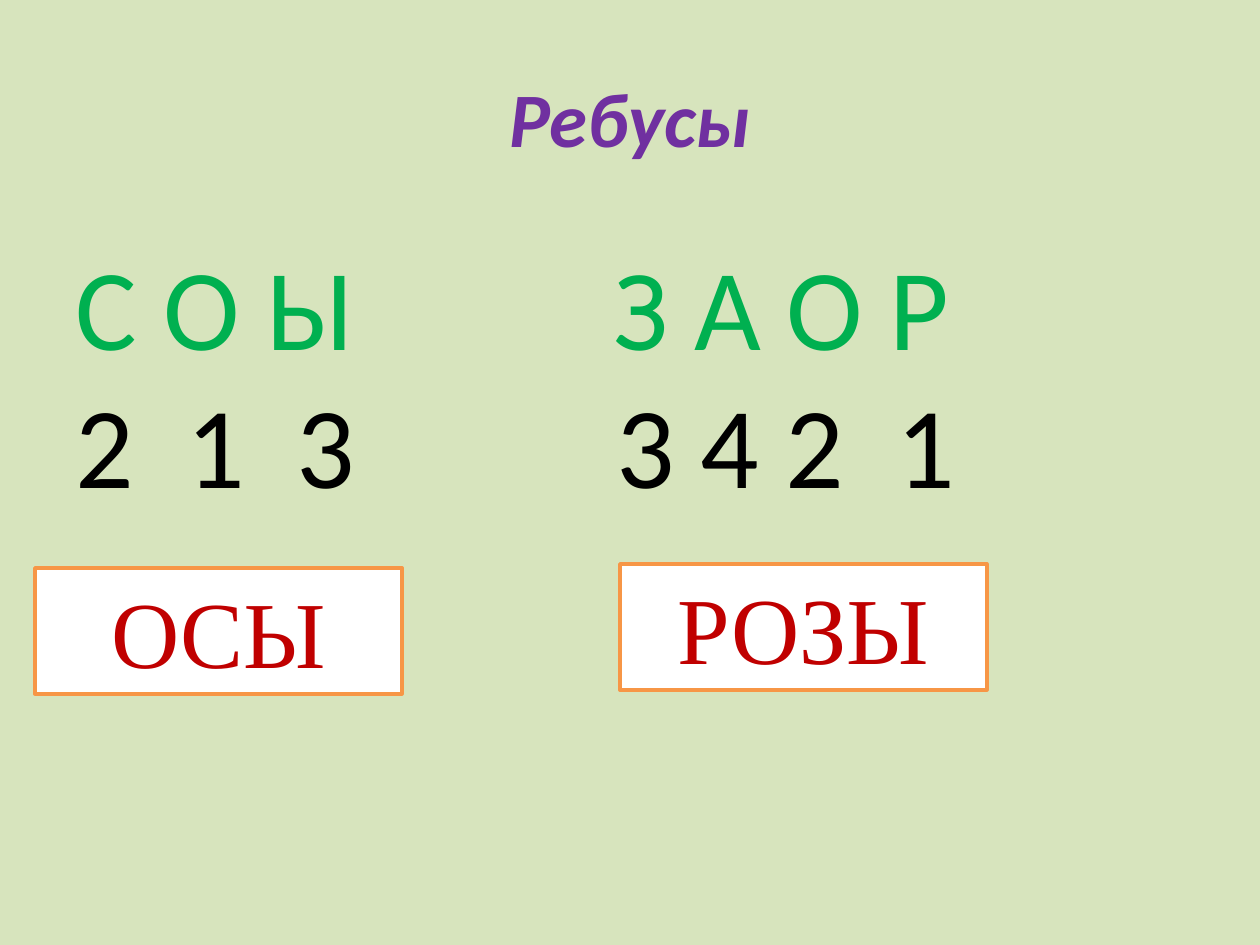
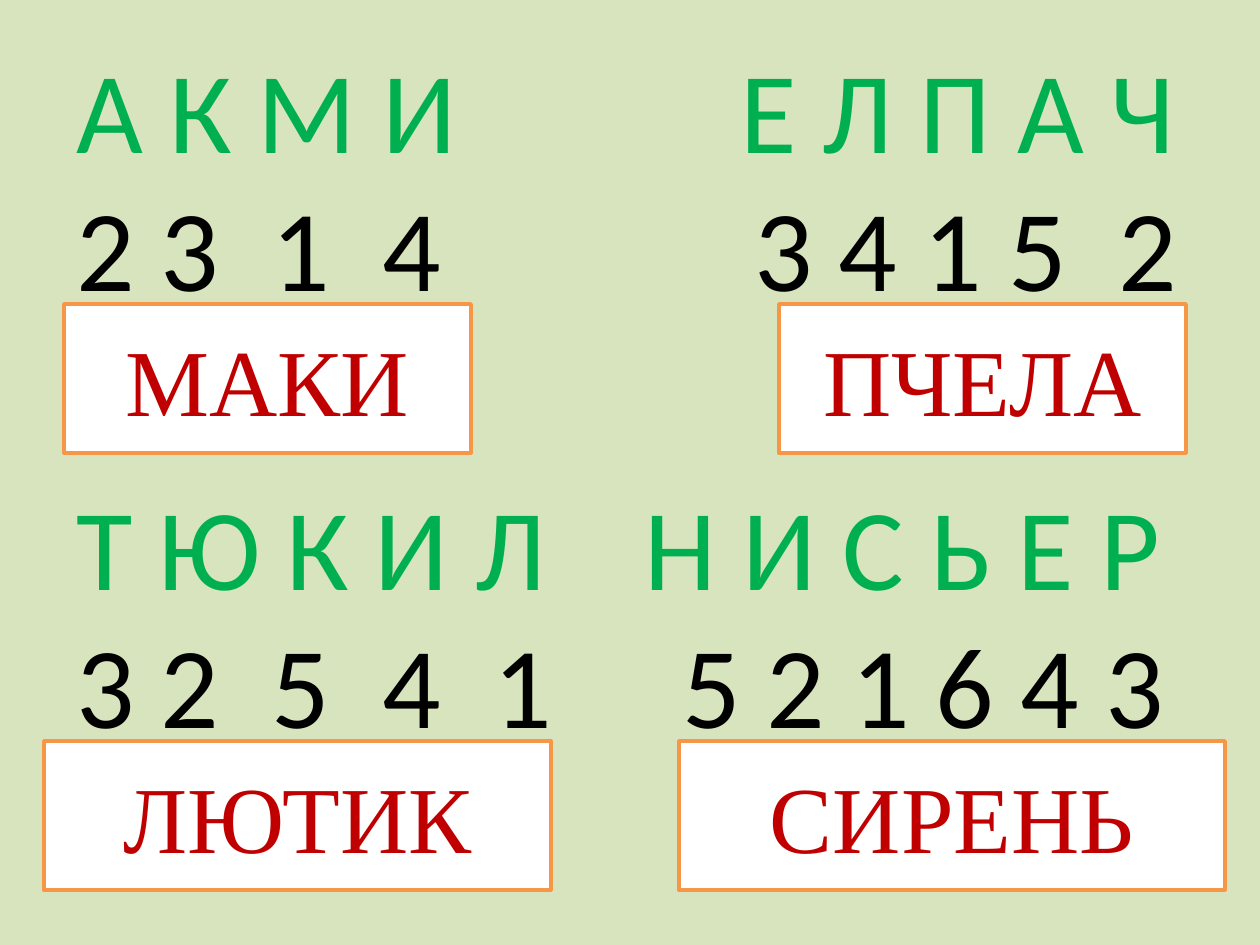
import pptx
import pptx.util
import pptx.dml.color
import pptx.enum.shapes
import pptx.enum.text
from lxml import etree

# Content: lengths in px, 126 px to the inch
HUES = {"ground": "D7E4BD", "title": "7030A0", "letter": "00B050",
        "digit": "000000", "card": "FFFFFF", "edge": "F79646", "answer": "C00000"}
TITLE = ("Ребусы", (63, 38, 1134, 158))
# Each row: text, hue, tab stops, space before in points
SLIDES = [
    {"title": TITLE,
     "body": (63, 220, 1134, 301),
     "rows": [("С О Ы\tЗ А О Р", "letter", [538], 0),
              ("2\t1\t3\t3 4 2\t1", "digit", [111, 221, 541, 821], 0)],
     "cards": [("ОСЫ", (35, 568, 367, 126)),
               ("РОЗЫ", (620, 564, 367, 126))]},
    {"title": None,
     "body": (64, 23, 1143, 897),
     "rows": [("А К М И\tЕ Л П А Ч", "letter", [664], 0),
              ("2 3\t1\t4\t3 4 1 5\t2", "digit", [195, 306, 678, 1042], 0),
              ("Т Ю К И Л\tН И С Ь Е Р", "letter", [568], 92),
              ("3 2\t5\t4\t1\t5 2 1 6 4 3", "digit", [195, 306, 417, 606], 0)],
     "cards": [("МАКИ", (64, 304, 407, 149)),
               ("ПЧЕЛА", (779, 304, 407, 149)),
               ("ЛЮТИК", (44, 741, 507, 149)),
               ("СИРЕНЬ", (679, 741, 546, 149))]},
]
Pt = pptx.util.Pt
MID = pptx.enum.text.MSO_ANCHOR.MIDDLE
CENTER = pptx.enum.text.PP_ALIGN.CENTER


def px(n):
    return pptx.util.Emu(round(n * 914400 / 126))


def hue(name):
    return pptx.dml.color.RGBColor.from_string(HUES[name])


def write(para, text, size, font, tint, strong=False):
    run = para.add_run()
    run.text = text
    run.font.size = Pt(size)
    run.font.name = font
    run.font.color.rgb = hue(tint)
    run.font.bold = run.font.italic = strong


def add_box(slide, place):
    frame = slide.shapes.add_textbox(*map(px, place)).text_frame
    frame.word_wrap = True
    return frame


def add_title(slide, text, place):
    frame = add_box(slide, place)
    frame.vertical_anchor = MID
    para = frame.paragraphs[0]
    para.alignment = CENTER
    write(para, text, 44, "Calibri", "title", True)


def set_tabs(para, stops):
    props = para._p.get_or_add_pPr()
    tabs = etree.SubElement(props, pptx.oxml.ns.qn("a:tabLst"))
    for stop in stops:
        etree.SubElement(tabs, pptx.oxml.ns.qn("a:tab"), pos=str(px(stop)), algn="l")


def add_rows(slide, rows, place):
    frame = add_box(slide, place)
    frame.margin_top = px(15)
    for i, (text, tint, stops, gap) in enumerate(rows):
        para = frame.add_paragraph() if i else frame.paragraphs[0]
        para.line_spacing = Pt(79)
        para.space_before = Pt(gap)
        set_tabs(para, stops)
        write(para, text, 66, "Calibri", tint)


def add_card(slide, text, place):
    card = slide.shapes.add_shape(pptx.enum.shapes.MSO_SHAPE.RECTANGLE, *map(px, place))
    card.shadow.inherit = False
    card.fill.solid()
    card.fill.fore_color.rgb = hue("card")
    card.line.color.rgb = hue("edge")
    card.line.width = Pt(2)
    card.text_frame.vertical_anchor = MID
    para = card.text_frame.paragraphs[0]
    para.alignment = CENTER
    write(para, text, 54, "Times New Roman", "answer")


def main():
    deck = pptx.Presentation()
    deck.slide_width, deck.slide_height = px(1260), px(945)
    for page in SLIDES:
        slide = deck.slides.add_slide(deck.slide_layouts[6])
        slide.background.fill.solid()
        slide.background.fill.fore_color.rgb = hue("ground")
        if page["title"]:
            add_title(slide, *page["title"])
        add_rows(slide, page["rows"], page["body"])
        for text, place in page["cards"]:
            add_card(slide, text, place)
    deck.save("out.pptx")


if __name__ == "__main__":
    main()
